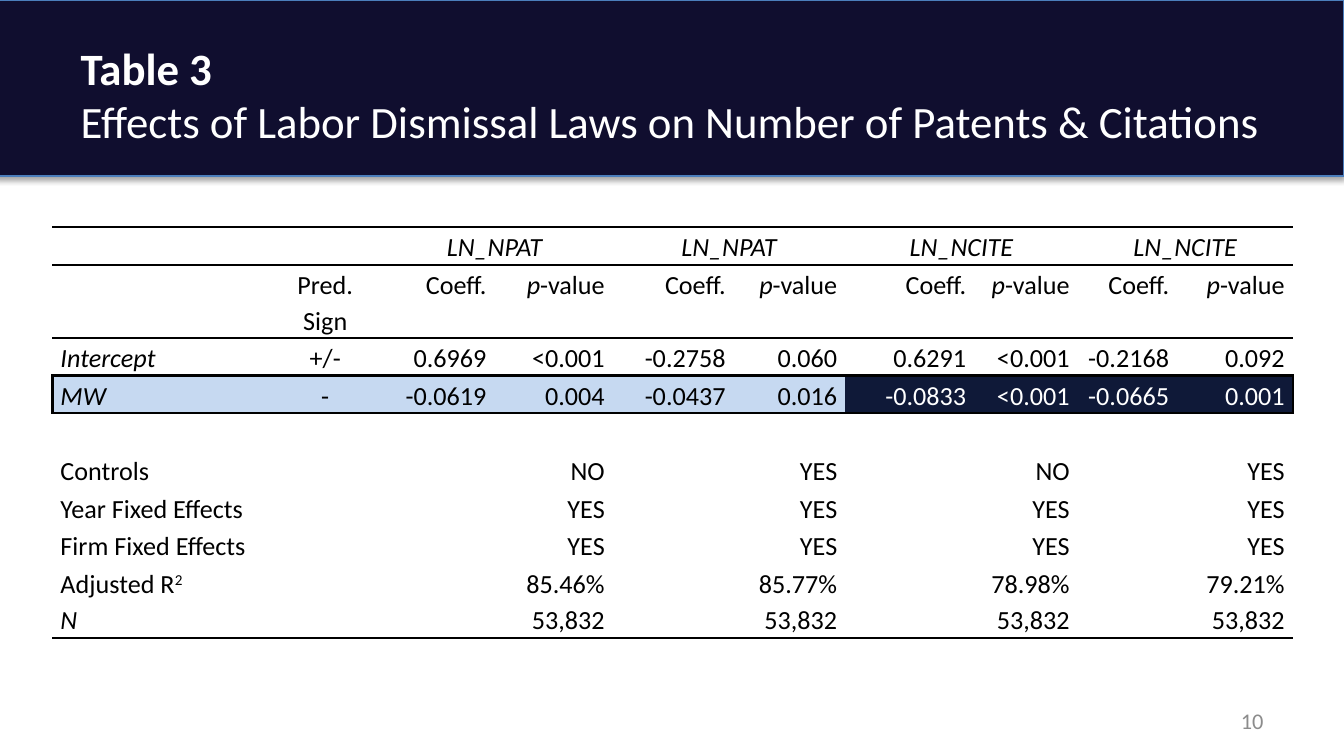
from lxml import etree
from pptx import Presentation
from pptx.dml.color import RGBColor
from pptx.enum.shapes import MSO_SHAPE
from pptx.enum.text import MSO_ANCHOR, MSO_AUTO_SIZE, PP_ALIGN
from pptx.oxml import parse_xml
from pptx.oxml.ns import nsdecls, qn
from pptx.util import Inches, Pt

LEFT, CENTER, RIGHT = PP_ALIGN.LEFT, PP_ALIGN.CENTER, PP_ALIGN.RIGHT
MIDDLE = MSO_ANCHOR.MIDDLE
NO_AUTOFIT = MSO_AUTO_SIZE.NONE
RECTANGLE = MSO_SHAPE.RECTANGLE
NO_STYLE_NO_GRID = "{2D5ABB26-0587-4C30-8999-92F81FD0307C}"

COL_WIDTHS = [1.65, 0.76, 0.88, 0.88, 0.9, 0.83, 0.96, 0.77, 0.74, 0.86]
ROW_HEIGHTS = [0.28, 0.52] + [0.28] * 6 + [0.25, 0.28]
# Width in points of the rule above each row; the last one closes the table
RULES = {0: 1, 1: 1, 2: 1, 3: 1.5, 4: 1.5, 10: 1}
MW_ROW, FIRST_CITE_COL = 3, 6


def summary(label, *values):
    """Row with one value under each p-value column."""
    row = [label, ""]
    for value in values:
        row += ["", value]
    return row


# *text* is italic, ^ starts a superscript
ROWS = [
    ["", "", "*LN_NPAT*", "", "*LN_NPAT*", "", "*LN_NCITE*", "", "*LN_NCITE*", ""],
    ["", "Pred.\nSign"] + ["Coeff.", "*p*-value"] * 4,
    ["*Intercept*", "+/-", "0.6969", "<0.001", "-0.2758", "0.060",
     "0.6291", "<0.001", "-0.2168", "0.092"],
    ["*MW*", "-", "-0.0619", "0.004", "-0.0437", "0.016",
     "-0.0833", "<0.001", "-0.0665", "0.001"],
    [""] * 10,
    summary("Controls", "NO", "YES", "NO", "YES"),
    summary("Year Fixed Effects", *["YES"] * 4),
    summary("Firm Fixed Effects", *["YES"] * 4),
    summary("Adjusted R^2", "85.46%", "85.77%", "78.98%", "79.21%"),
    summary("*N*", *["53,832"] * 4),
]


def rgb(color):
    return RGBColor.from_string(color)


class SlideBuilder:
    font = "Calibri"
    navy, band_line = "100E2F", "4B7EBC"
    pale, dark = "C6D9F1", "0F1938"
    black, white, gray = "000000", "FFFFFF", "8C8C8C"

    def __init__(self, s):
        self.s = s

    def style(self, p, size, color, align=LEFT):
        p.alignment = align
        p.font.name, p.font.size = self.font, Pt(size)
        p.font.color.rgb = rgb(color)

    def band(self, x, y, w, h):
        """Header band with a soft shadow, placed behind everything."""
        sp = self.s.shapes.add_shape(RECTANGLE, Inches(x), Inches(y), Inches(w), Inches(h))
        sp.fill.solid()
        sp.fill.fore_color.rgb = rgb(self.navy)
        sp.line.color.rgb = rgb(self.band_line)
        sp.line.width = Pt(0.75)
        sp.shadow.inherit = False
        effects = sp._element.spPr.find(qn("a:effectLst"))
        effects.append(parse_xml(
            f'<a:outerShdw {nsdecls("a")} blurRad="{Pt(3.1)}" dist="{Pt(1.8)}" '
            f'dir="5400000" rotWithShape="0"><a:srgbClr val="{self.black}">'
            '<a:alpha val="35000"/></a:srgbClr></a:outerShdw>'))
        self.s.shapes._spTree.insert(2, sp._element)

    def title(self, x, y, w, h, heading, subtitle):
        sp = self.s.shapes.title
        sp.left, sp.top, sp.width, sp.height = Inches(x), Inches(y), Inches(w), Inches(h)
        tf = sp.text_frame
        tf.word_wrap, tf.auto_size, tf.vertical_anchor = True, NO_AUTOFIT, MIDDLE
        p = tf.paragraphs[0]
        self.style(p, 24, self.white)
        r = p.add_run()
        r.text, r.font.bold = heading, True
        p.add_line_break()
        r = p.add_run()
        r.text, r.font.bold = subtitle, False

    def text(self, x, y, w, h, text, size, color, align):
        tf = self.s.shapes.add_textbox(Inches(x), Inches(y), Inches(w), Inches(h)).text_frame
        tf.word_wrap, tf.vertical_anchor = True, MIDDLE
        p = tf.paragraphs[0]
        p.text = text
        self.style(p, size, color, align)

    def table(self, x, y, rows):
        frame = self.s.shapes.add_table(
            len(rows), len(COL_WIDTHS), Inches(x), Inches(y),
            Inches(sum(COL_WIDTHS)), Inches(sum(ROW_HEIGHTS)))
        table = frame.table
        table.first_row = table.horz_banding = False
        table._tbl.tblPr.find(qn("a:tableStyleId")).text = NO_STYLE_NO_GRID
        for column, width in zip(table.columns, COL_WIDTHS):
            column.width = Inches(width)
        for row, height in zip(table.rows, ROW_HEIGHTS):
            row.height = Inches(height)
        for i, row in enumerate(rows):
            for j, text in enumerate(row):
                self.cell(table.cell(i, j), i, j, text)
        for j in range(2, len(COL_WIDTHS), 2):
            table.cell(0, j).merge(table.cell(0, j + 1))

    def cell(self, cell, i, j, text):
        cell.margin_left = cell.margin_right = Inches(0.06)
        cell.margin_top = cell.margin_bottom = 0
        self.border(cell, "L", 1.5 if i == MW_ROW and j == 0 else 0)
        self.border(cell, "R", 1.5 if i == MW_ROW and j == len(COL_WIDTHS) - 1 else 0)
        self.border(cell, "T", RULES.get(i, 0))
        self.border(cell, "B", RULES.get(i + 1, 0))
        color = self.black
        if i == MW_ROW:
            cites = j >= FIRST_CITE_COL
            color = self.white if cites else self.black
            cell.fill.solid()
            cell.fill.fore_color.rgb = rgb(self.dark if cites else self.pale)
        else:
            cell.fill.background()
        align = LEFT if j == 0 else CENTER if i == 0 or j == 1 else RIGHT
        tf = cell.text_frame
        for n, line in enumerate(text.split("\n")):
            p = tf.add_paragraph() if n else tf.paragraphs[0]
            self.style(p, 14, color, align)
            p.line_spacing = 1.15
            self.runs(p, line)

    def runs(self, p, line):
        """Add runs for a line marked up with *italic* and ^superscript."""
        base, _, raised = line.partition("^")
        for n, part in enumerate(base.split("*")):
            if part:
                r = p.add_run()
                r.text, r.font.italic = part, n % 2 == 1
        if raised:
            r = p.add_run()
            r.text = raised
            r.font._element.set("baseline", "30000")

    def border(self, cell, side, width):
        """Draw one side of a cell, or clear it when the width is 0."""
        tcPr = cell._tc.get_or_add_tcPr()
        ln = etree.SubElement(tcPr, qn(f"a:ln{side}"), w=str(Pt(width)))
        if width:
            fill = etree.SubElement(ln, qn("a:solidFill"))
            etree.SubElement(fill, qn("a:srgbClr"), val=self.black)
        else:
            etree.SubElement(ln, qn("a:noFill"))


def main():
    prs = Presentation()
    prs.slide_width = Inches(10)
    prs.slide_height = prs.slide_width * 9 // 16
    slide = SlideBuilder(prs.slides.add_slide(prs.slide_layouts[5]))
    slide.band(-0.04, 0, 10.04, 1.31)
    slide.title(0.5, 0.23, 9, 0.94, "Table 3",
                "Effects of Labor Dismissal Laws on Number of Patents & Citations")
    slide.table(0.39, 1.69, ROWS)
    slide.text(7.17, 5.21, 2.33, 0.3, "10", 12, slide.gray, RIGHT)
    prs.save("out.pptx")


if __name__ == "__main__":
    main()
